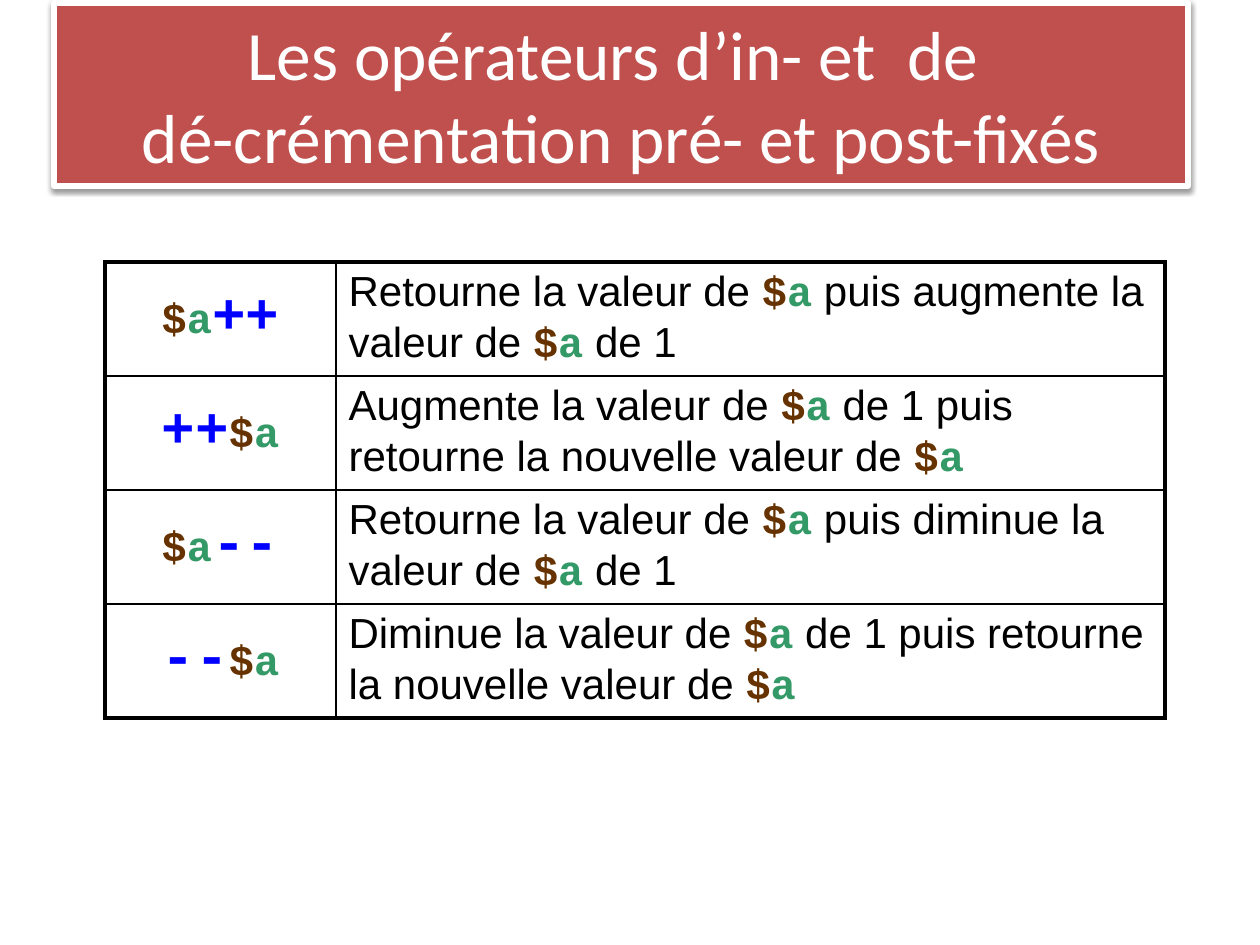
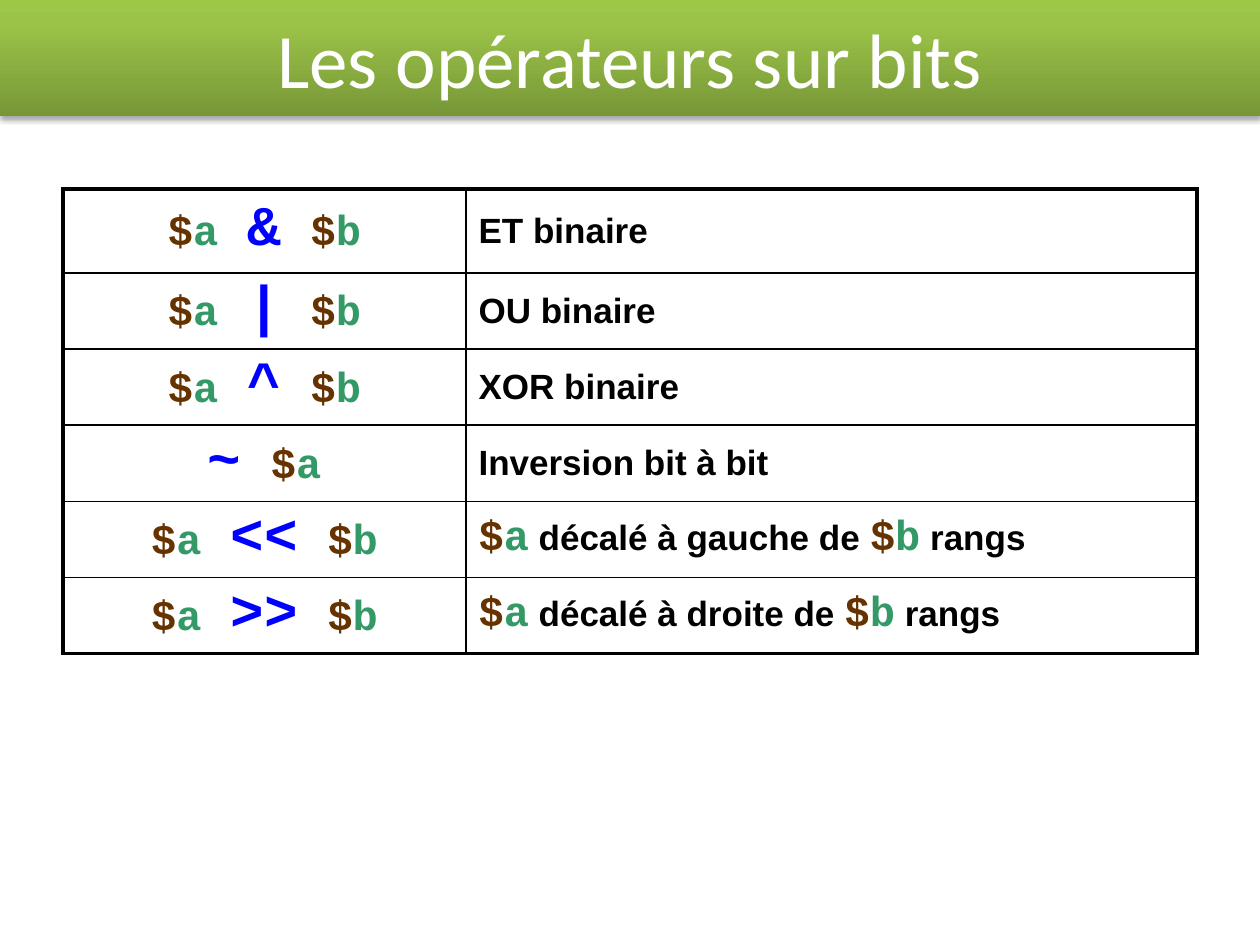
from copy import deepcopy
from itertools import groupby

from lxml.etree import SubElement
from pptx import Presentation
from pptx.dml.color import RGBColor
from pptx.enum.text import MSO_ANCHOR, MSO_AUTO_SIZE, PP_ALIGN
from pptx.oxml.ns import qn
from pptx.util import Emu, Pt

EMU_PER_PX = 914400 / 126
COLORS = {
    "text": "000000", "white": "FFFFFF", "red": "C0504D",
    "dollar": "663300", "name": "339966", "operator": "0000FF",
}
GREEN_STOPS = [(0, "779737"), (0.8, "9BC348"), (1, "9DC746")]
TITLE_FONT, BODY_FONT, CODE_FONT = "Calibri", "Arial", "Courier New"
THIN, THICK = Pt(1), Pt(2.25)


def px(n):
    return Emu(round(n * EMU_PER_PX))


def add_run(p, text, size=24, font=CODE_FONT, color="text", bold=True):
    r = p.add_run()
    r.text = text
    r.font.size, r.font.name, r.font.bold = Pt(size), font, bold
    r.font.color.rgb = RGBColor.from_string(COLORS[color])


def add_operators(p, text):
    for is_gap, chars in groupby(text, str.isspace):
        size, color = (28, "text") if is_gap else (32, "operator")
        add_run(p, "".join(chars), size=size, color=color)


def add_code(p, text, add_plain):
    """Colour each $x variable; add_plain writes the text between them."""
    head, *parts = text.split("$")
    if head:
        add_plain(p, head)
    for part in parts:
        add_run(p, "$", color="dollar")
        add_run(p, part[0], color="name")
        if part[1:]:
            add_plain(p, part[1:])


def add_color(parent, color):
    return SubElement(parent, qn("a:srgbClr"), val=color)


class Deck:
    def __init__(self):
        self.prs = Presentation()
        self.prs.slide_width, self.prs.slide_height = px(1260), px(945)
        self.s = None

    def slide(self):
        self.s = self.prs.slides.add_slide(self.prs.slide_layouts[5])

    def title(self, text, box, size):
        sp = self.s.shapes.title
        sp.left, sp.top, sp.width, sp.height = map(px, box)
        tf = sp.text_frame
        tf.auto_size, tf.word_wrap = MSO_AUTO_SIZE.NONE, True
        tf.vertical_anchor = MSO_ANCHOR.MIDDLE
        p = tf.paragraphs[0]
        p.alignment = PP_ALIGN.CENTER
        for i, line in enumerate(text.split("\n")):
            if i:
                p.add_line_break()
            add_run(p, line, size=size, font=TITLE_FONT, color="white", bold=False)
        return sp

    def solid(self, sp, fill, line, width):
        sp.fill.solid()
        sp.fill.fore_color.rgb = RGBColor.from_string(COLORS[fill])
        sp.line.color.rgb = RGBColor.from_string(COLORS[line])
        sp.line.width = Pt(width)

    def gradient(self, sp, stops):
        sp.fill.gradient()
        sp.fill.gradient_angle = 90
        gs_list = next(sp.element.iter(qn("a:gsLst")))
        for _ in stops[2:]:
            gs_list.append(deepcopy(gs_list[0]))
        for stop, (position, color) in zip(sp.fill.gradient_stops, stops):
            stop.position = position
            stop.color.rgb = RGBColor.from_string(color)
        sp.line.fill.background()

    def shadow(self, sp, distance, opacity):
        sp.shadow.inherit = False
        effects = next(sp.element.iter(qn("a:effectLst")))
        outer = SubElement(effects, qn("a:outerShdw"), blurRad=str(Pt(3.1)),
                           dist=str(Pt(distance)), dir="5400000", rotWithShape="0")
        SubElement(add_color(outer, COLORS["text"]), qn("a:alpha"),
                   val=str(opacity * 1000))

    def borders(self, cell, edges):
        """Draw thick lines on the sides named in edges and thin ones elsewhere."""
        tc_pr = cell._tc.get_or_add_tcPr()
        for side in "LRTB":
            width = THICK if side in edges else THIN
            ln = SubElement(tc_pr, qn(f"a:ln{side}"), w=str(width))
            add_color(SubElement(ln, qn("a:solidFill")), COLORS["text"])
        cell.fill.background()

    def operator_table(self, rows, at, widths, heights, size, bold):
        def add_words(p, text):
            add_run(p, text, size=size, font=BODY_FONT, bold=bold)

        table = self.s.shapes.add_table(
            len(rows), 2, px(at[0]), px(at[1]),
            px(sum(widths)), px(sum(heights))).table
        table.first_row = table.horz_banding = False
        for column, width in zip(table.columns, widths):
            column.width = px(width)
        for i, (row, height) in enumerate(zip(rows, heights)):
            table.rows[i].height = px(height)
            edges = ("T" if i == 0 else "") + ("B" if i == len(rows) - 1 else "")
            styles = [("L", PP_ALIGN.CENTER, add_operators),
                      ("R", PP_ALIGN.LEFT, add_words)]
            for j, (side, align, add_plain) in enumerate(styles):
                cell = table.cell(i, j)
                cell.vertical_anchor = MSO_ANCHOR.MIDDLE
                self.borders(cell, edges + side)
                p = cell.text_frame.paragraphs[0]
                p.alignment = align
                before = SubElement(p._p.get_or_add_pPr(), qn("a:spcBef"))
                SubElement(before, qn("a:spcPct"), val="20000")
                add_code(p, row[j], add_plain)


def increment_slide(deck):
    deck.slide()
    sp = deck.title("Les opérateurs d’in- et  de \ndé-crémentation pré- et post-fixés",
                    (54, 3, 1134, 183), 39.6)
    deck.solid(sp, "red", "white", 3)
    deck.shadow(sp, 1.6, 38)
    rows = [
        ("$a++", "Retourne la valeur de $a puis augmente la valeur de $a de 1"),
        ("++$a", "Augmente la valeur de $a de 1 puis retourne la nouvelle valeur de $a"),
        ("$a--", "Retourne la valeur de $a puis diminue la valeur de $a de 1"),
        ("--$a", "Diminue la valeur de $a de 1 puis retourne la nouvelle valeur de $a"),
    ]
    deck.operator_table(rows, (105, 262), (231, 829), [114] * 4, size=24, bold=False)


def bits_slide(deck):
    deck.slide()
    sp = deck.title("Les opérateurs sur bits", (0, 0, 1260, 116), 44)
    deck.gradient(sp, GREEN_STOPS)
    deck.shadow(sp, 1.8, 35)
    rows = [
        ("$a & $b", "ET binaire"),
        ("$a | $b", "OU binaire"),
        ("$a ^ $b", "XOR binaire"),
        ("~ $a", "Inversion bit à bit"),
        ("$a << $b", "$a décalé à gauche de $b rangs"),
        ("$a >> $b", "$a décalé à droite de $b rangs"),
    ]
    deck.operator_table(rows, (63, 189), (403, 731), [84] + [76] * 5, size=20, bold=True)


def main():
    deck = Deck()
    increment_slide(deck)
    bits_slide(deck)
    deck.prs.save("out.pptx")


if __name__ == "__main__":
    main()
